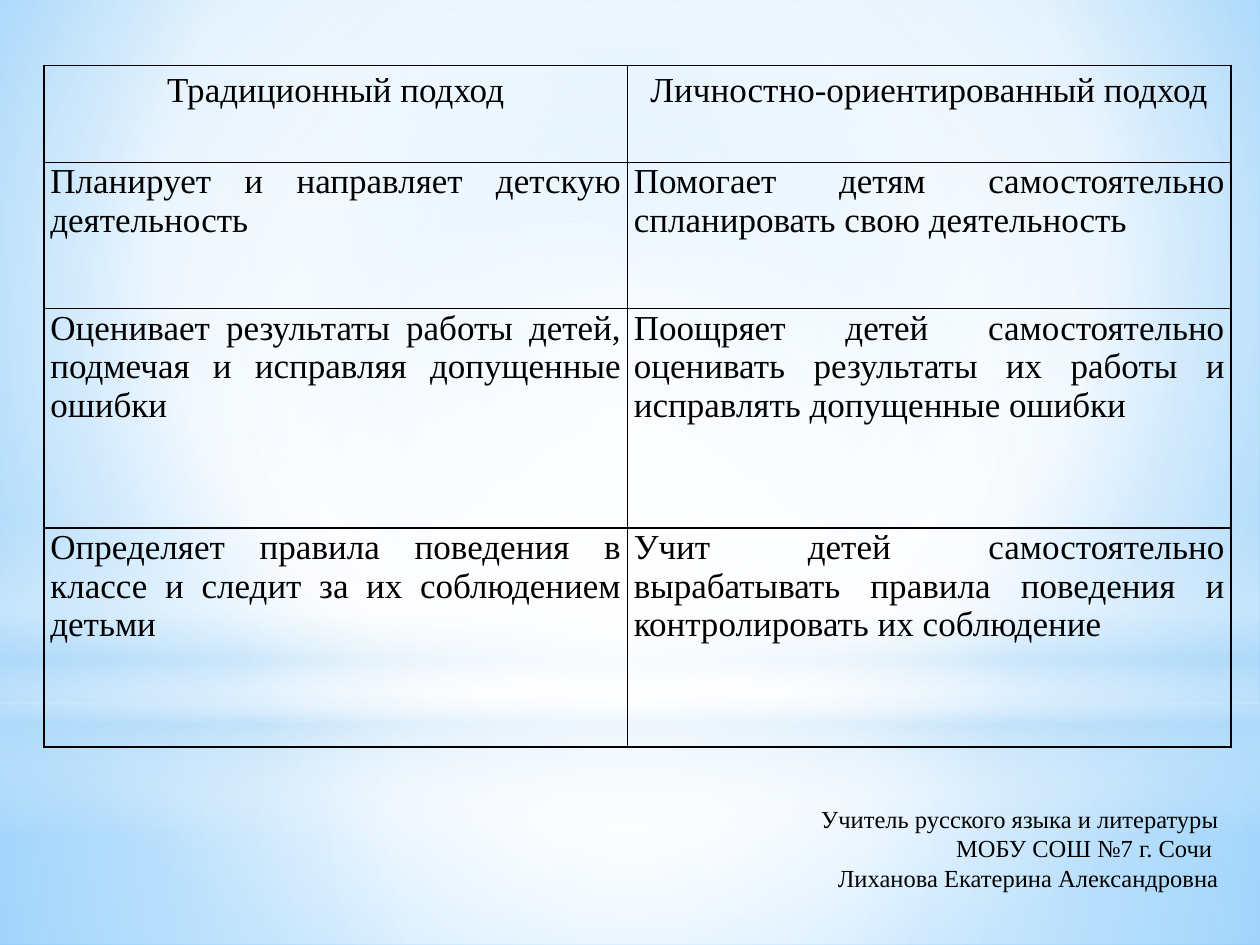
"""Build a slide that compares two teaching approaches in a table."""
from dataclasses import dataclass

from lxml.etree import Element, SubElement
from pptx import Presentation
from pptx.dml.color import RGBColor
from pptx.enum.shapes import MSO_SHAPE as Shape
from pptx.enum.text import PP_ALIGN as Align
from pptx.oxml.ns import qn
from pptx.util import Inches, Pt


@dataclass(frozen=True)
class Theme:
    """Colours, font and type sizes."""
    ink: str = "000000"
    white: str = "FFFFFF"
    haze: str = "B4DCFA"
    sky: str = "9ED5FF"
    deep: str = "5BB9FF"
    font: str = "Times New Roman"
    table_size: int = 20
    credit_size: int = 14
    border: int = 1


THEME = Theme()
CENTRE = (50, 50, 50, 50)
BACKDROP = [(0, THEME.sky, 100), (60, THEME.white, 100), (100, THEME.deep, 100)]
FLOOR = [(0, THEME.white, 91), (37, THEME.white, 76), (100, THEME.haze, 79)]
WALL = [(0, THEME.white, 89), (48, THEME.white, 62), (100, THEME.haze, 79)]
HORIZON = [(0, THEME.white, 0), (29, THEME.white, 30), (45, THEME.haze, 40),
           (55, THEME.white, 26), (65, THEME.haze, 60), (100, THEME.white, 0)]
GLOW = [(0, THEME.white, 100), (56, THEME.white, 0)]

APPROACHES = [
    ("Традиционный подход", "Личностно-ориентированный подход"),
    ("Планирует и направляет детскую деятельность",
     "Помогает детям самостоятельно спланировать свою деятельность"),
    ("Оценивает результаты работы детей, подмечая и исправляя допущенные ошибки",
     "Поощряет детей самостоятельно оценивать результаты их работы "
     "и исправлять допущенные ошибки"),
    ("Определяет правила поведения в классе и следит за их соблюдением детьми",
     "Учит детей самостоятельно вырабатывать правила поведения "
     "и контролировать их соблюдение"),
]
CREDIT = ["Учитель русского языка и литературы", "МОБУ СОШ №7 г. Сочи ",
          "Лиханова Екатерина Александровна"]


class Painter:
    """Draws on one page, with lengths in percent of the page's size."""

    def __init__(self, deck, theme):
        self.deck, self.theme = deck, theme
        self.page = deck.slides.add_slide(deck.slide_layouts[6])

    def across(self, share):
        return round(self.deck.slide_width * share / 100)

    def down(self, share):
        return round(self.deck.slide_height * share / 100)

    def place(self, left, top, width, height):
        return (self.across(left), self.down(top),
                self.across(width), self.down(height))

    def gradient(self, holder, stops, focus=None):
        """Replace the holder's empty fill by a radial or a vertical gradient."""
        fill = Element(qn("a:gradFill"), rotWithShape="1")
        stop_list = SubElement(fill, qn("a:gsLst"))
        for position, colour, opacity in stops:
            stop = SubElement(stop_list, qn("a:gs"), pos=str(position * 1000))
            tint = SubElement(stop, qn("a:srgbClr"), val=colour)
            if opacity < 100:
                SubElement(tint, qn("a:alpha"), val=str(opacity * 1000))
        if focus:
            radial = SubElement(fill, qn("a:path"), {"path": "circle"})
            sides = {side: str(share * 1000) for side, share in zip("ltrb", focus)}
            SubElement(radial, qn("a:fillToRect"), sides)
        else:
            SubElement(fill, qn("a:lin"), ang="5400000", scaled="0")
        holder.replace(holder.find(qn("a:noFill")), fill)

    def backdrop(self, stops, focus):
        self.page.background.fill.background()
        self.gradient(self.page.element.cSld.bg.bgPr, stops, focus)

    def light(self, kind, bounds, stops, focus=None):
        shape = self.page.shapes.add_shape(kind, *self.place(*bounds))
        shape.shadow.inherit = False
        shape.line.fill.background()
        shape.fill.background()
        self.gradient(shape.element.spPr, stops, focus)

    def add_text(self, para, text, size, align):
        para.alignment = align
        span = para.add_run()
        span.text = text
        span.font.name, span.font.size = self.theme.font, Pt(size)
        span.font.color.rgb = RGBColor.from_string(self.theme.ink)

    def frame(self, cell):
        """Give a cell no fill and a thin line on each side."""
        cell.fill.background()
        properties = cell._tc.get_or_add_tcPr()
        for index, side in enumerate("LRTB"):
            line = Element(qn(f"a:ln{side}"), w=str(Pt(self.theme.border)))
            paint = SubElement(line, qn("a:solidFill"))
            SubElement(paint, qn("a:srgbClr"), val=self.theme.ink)
            properties.insert(index, line)

    def table(self, left, top, widths, heights, rows):
        bounds = self.place(left, top, sum(widths), sum(heights))
        table = self.page.shapes.add_table(len(heights), len(widths), *bounds).table
        table.first_row = table.horz_banding = False
        for column, width in zip(table.columns, widths):
            column.width = self.across(width)
        for index, (row, height, texts) in enumerate(zip(table.rows, heights, rows)):
            row.height = self.down(height)
            for cell, text in zip(row.cells, texts):
                cell.margin_left = cell.margin_right = Inches(0.05)
                cell.margin_top = cell.margin_bottom = 0
                para = cell.text_frame.paragraphs[0]
                if index == 0:
                    para.line_spacing = 1.15
                align = Align.JUSTIFY if index else Align.CENTER
                self.add_text(para, text, self.theme.table_size, align)
                self.frame(cell)

    def credit(self, bounds, lines):
        frame = self.page.shapes.add_textbox(*self.place(*bounds)).text_frame
        frame.word_wrap = True
        for index, line in enumerate(lines):
            para = frame.add_paragraph() if index else frame.paragraphs[0]
            self.add_text(para, line, self.theme.credit_size, Align.RIGHT)


def main():
    deck = Presentation()
    deck.slide_width, deck.slide_height = Inches(10), Inches(7.5)
    painter = Painter(deck, THEME)
    painter.backdrop(BACKDROP, (20, 10, 20, 60))
    painter.light(Shape.RECTANGLE, (0, 74.4, 100, 25.6), FLOOR, CENTRE)
    painter.light(Shape.RECTANGLE, (0, 0, 100, 74.4), WALL, CENTRE)
    painter.light(Shape.RECTANGLE, (0, 54.93, 100, 33.33), HORIZON)
    painter.light(Shape.OVAL, (0, 23.33, 100, 74.4), GLOW, CENTRE)
    painter.table(3.5, 6.93, (46.3, 47.9), (10.27, 15.47, 23.2, 23.2), APPROACHES)
    painter.credit((64.1, 84.4, 33.6, 10.8), CREDIT)
    deck.save("out.pptx")


if __name__ == "__main__":
    main()
